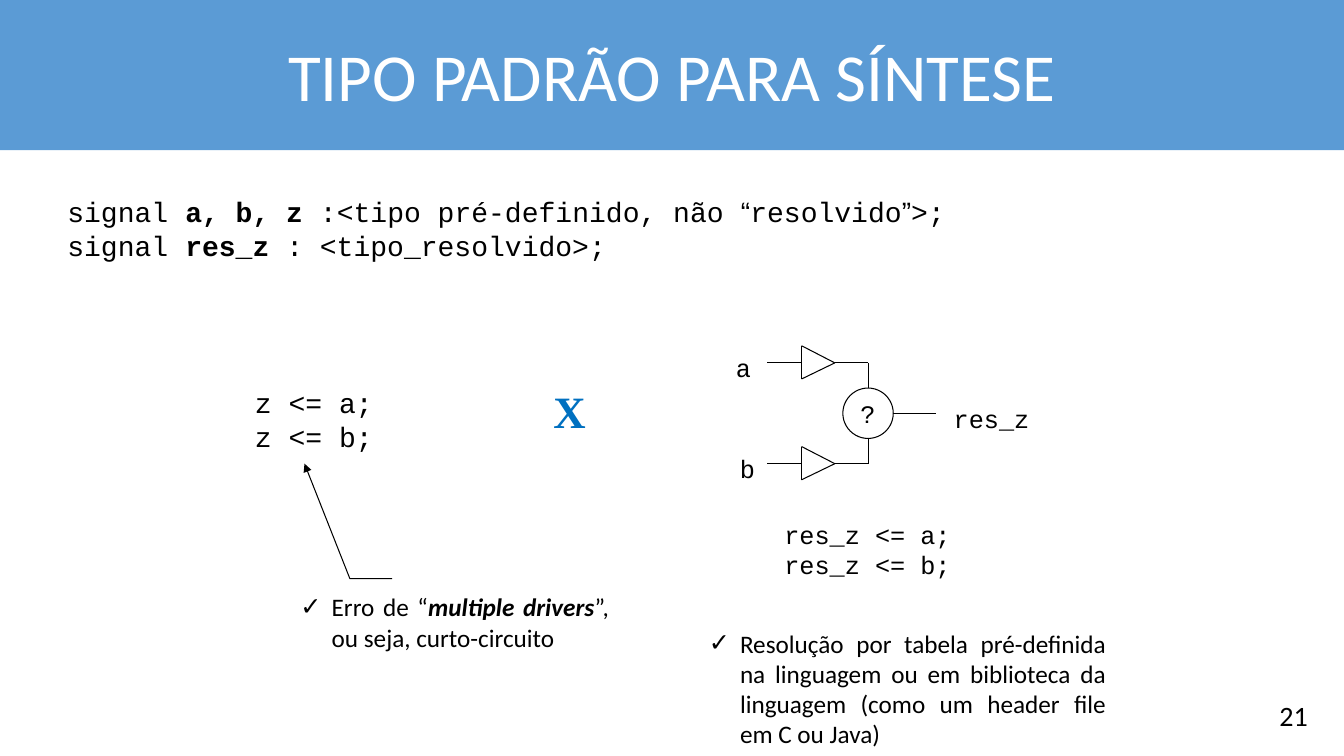
from lxml import etree
from pptx import Presentation
from pptx.dml.color import RGBColor
from pptx.enum.shapes import MSO_CONNECTOR as Connector, MSO_SHAPE as Preset
from pptx.enum.text import MSO_ANCHOR as Anchor, MSO_AUTO_SIZE as Fit, PP_ALIGN as Align
from pptx.oxml.ns import qn
from pptx.util import Pt

PX = 9144  # EMU in one px, with 100 px to the inch
COLORS = {"banner": "5B9BD5", "white": "FFFFFF", "ink": "000000", "accent": "0070C0"}
CODE, TEXT, QUOTE, SERIF = "Courier New", "Calibri", "Arial", "Times New Roman"
BOLD = {"bold": True}


def rgb(name):
    return RGBColor.from_string(COLORS[name])


def apply(target, values):
    for key, value in values.items():
        setattr(target, key, value)


class SlideBuilder:
    """Holds the style, the slide and the shape tree being drawn on."""

    line_width = Pt(0.75)
    list_indent = 31

    def __init__(self, slide):
        self.slide = slide
        self.canvas = slide.shapes

    def place(self, shape, box):
        apply(shape, dict(zip(("left", "top", "width", "height"), (v * PX for v in box))))

    def typeset(self, frame, paragraphs, size, font=CODE, color="ink", align=Align.LEFT, **base):
        """Each paragraph is a list of (text, font overrides) pairs."""
        for i, runs in enumerate(paragraphs):
            line = frame.paragraphs[0] if i == 0 else frame.add_paragraph()
            apply(line, {"alignment": align, "space_before": Pt(0), "line_spacing": 1.0})
            for words, changes in runs:
                run = line.add_run()
                run.text = words
                apply(run.font, {"name": font, "size": Pt(size), **base, **changes})
                run.font.color.rgb = rgb(color)

    def title(self, words, box):
        banner = self.slide.shapes.title
        self.place(banner, box)
        banner.fill.solid()
        banner.fill.fore_color.rgb = rgb("banner")
        apply(banner.text_frame, {"margin_left": 80 * PX, "margin_right": 80 * PX,
                                  "vertical_anchor": Anchor.MIDDLE, "auto_size": Fit.NONE})
        self.typeset(banner.text_frame, [[(words, {})]], 48, TEXT, "white", Align.CENTER)

    def check_list(self, index, runs, box):
        body = self.slide.placeholders[index]
        self.place(body, box)
        apply(body.text_frame, {"auto_size": Fit.NONE, "vertical_anchor": Anchor.TOP})
        self.typeset(body.text_frame, [runs], 18, TEXT, align=Align.JUSTIFY)
        props = body.text_frame.paragraphs[0]._p.get_or_add_pPr()
        props.set("marL", str(self.list_indent * PX))
        props.set("indent", str(-self.list_indent * PX))
        etree.SubElement(props, qn("a:buFont")).set("typeface", QUOTE)
        etree.SubElement(props, qn("a:buChar")).set("char", "✓")

    def text(self, paragraphs, box, size, wrap=True, **style):
        label = self.canvas.add_textbox(*(v * PX for v in box))
        apply(label.text_frame, {"word_wrap": wrap, "auto_size": Fit.SHAPE_TO_FIT_TEXT})
        self.typeset(label.text_frame, paragraphs, size, **style)

    def outline(self, shape):
        shape.line.color.rgb = rgb("ink")
        shape.line.width = self.line_width

    def wire(self, x1, y1, x2, y2):
        wire = self.canvas.add_connector(Connector.STRAIGHT, *(v * PX for v in (x1, y1, x2, y2)))
        self.outline(wire)
        etree.SubElement(wire._element.spPr, qn("a:effectLst"))

    def node(self, words, box):
        node = self.canvas.add_shape(Preset.OVAL, *(v * PX for v in box))
        node.shadow.inherit = False
        node.fill.background()
        self.outline(node)
        apply(node.text_frame, {"word_wrap": False, "vertical_anchor": Anchor.MIDDLE})
        self.typeset(node.text_frame, [[(words, {})]], 18, align=Align.CENTER)

    def arrow(self, start, *points):
        pen = self.canvas.build_freeform(*start, scale=PX)
        pen.add_line_segments(points, close=False)
        arrow = pen.convert_to_shape()
        arrow.shadow.inherit = False
        arrow.fill.background()
        self.outline(arrow)
        line = arrow._element.spPr.find(qn("a:ln"))
        etree.SubElement(line, qn("a:tailEnd")).set("type", "triangle")


def code(*lines):
    return [[(line, {})] for line in lines]


def main():
    deck = Presentation()
    apply(deck, {"slide_width": 1333 * PX, "slide_height": 750 * PX})
    page = SlideBuilder(deck.slides.add_slide(deck.slide_layouts[3]))

    # Title and slide number
    page.title("TIPO PADRÃO PARA SÍNTESE", (0, 0, 1333, 149))
    page.text(code("21"), (1228, 688, 79, 44), 20, font=TEXT, align=Align.RIGHT)

    # Declarations
    quote = {"name": QUOTE}
    page.text([
        [("signal ", {}), ("a, b, z", BOLD), (" :<tipo pré-definido, não ", {}),
         ("“", quote), ("resolvido", {}), ("”", quote), (">;", {})],
        [("signal ", {}), ("res_z", BOLD), (" : <tipo_resolvido>;", {})],
    ], (57, 188, 1043, 77), 20)

    # Assignments compared
    page.text(code("z <= a;", "z <= b;"), (243, 378, 138, 77), 20, wrap=False)
    page.text(code("res_z <= a;", "res_z <= b;"), (768, 510, 308, 70), 18)
    page.text(code("X"), (536, 376, 58, 63), 32, font=SERIF, color="accent",
              align=Align.CENTER, bold=True)

    # Resolution circuit: two buffers feeding one node
    page.canvas = page.slide.shapes.add_group_shape().shapes
    gate_left, gate_right, bus_x, node_y, radius = 795, 828, 861, 410, 25
    for name, label_x, side in (("a", 720, -1), ("b", 724, 1)):
        y = node_y + side * 50
        top, bottom = y - 17, y + 16
        page.wire(gate_left, top, gate_left, bottom)
        page.wire(gate_left, top, gate_right, y)
        page.wire(gate_left, bottom, gate_right, y)
        page.wire(761, y, gate_left, y)
        page.wire(gate_right, y, bus_x, y)
        page.wire(bus_x, y, bus_x, node_y + side * radius)
        page.text(code(name), (label_x, y - 15, 35, 40), 18, wrap=False)
    page.node("?", (bus_x - radius, node_y - radius, 2 * radius, 2 * radius))
    page.wire(bus_x + radius, node_y, 928, node_y)
    page.text(code("res_z"), (936, node_y - 15, 95, 40), 18, wrap=False)
    page.canvas = page.slide.shapes

    # Remarks
    page.arrow((389, 574), (347, 574), (302, 460))
    page.check_list(1, [("Erro de “", {}), ("multiple drivers", {"bold": True, "italic": True}),
                        ("”, ou seja, curto-circuito", {})], (288, 582, 326, 71))
    page.check_list(2, [("Resolução por tabela pré-definida na linguagem ou em biblioteca da "
                         "linguagem (como um header file em C ou Java)", {})],
                    (693, 618, 414, 131))

    deck.save("out.pptx")


if __name__ == "__main__":
    main()
